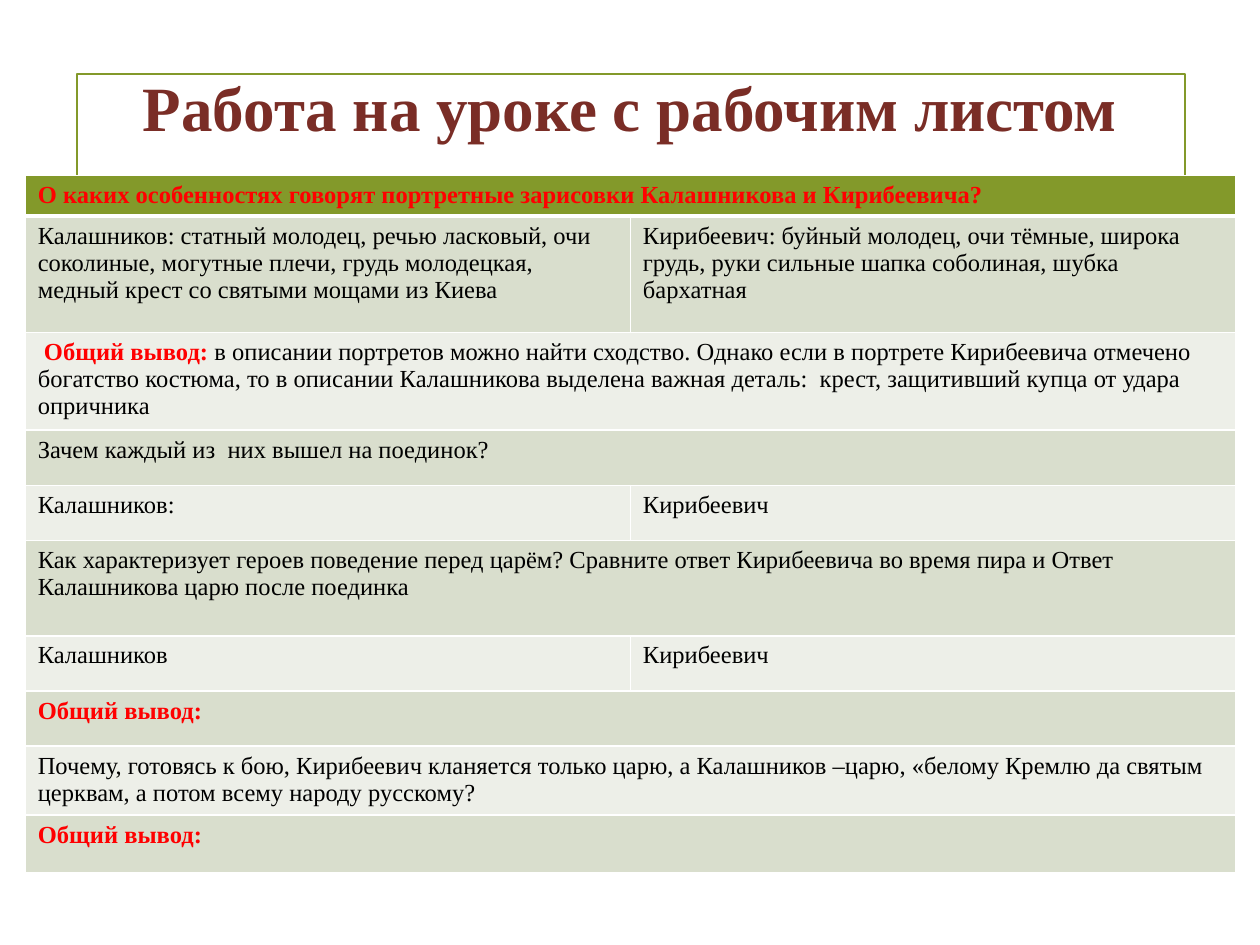
from lxml.etree import SubElement
from pptx import Presentation
from pptx.dml.color import RGBColor
from pptx.enum.shapes import MSO_SHAPE
from pptx.enum.text import MSO_ANCHOR, PP_ALIGN
from pptx.oxml.ns import qn
from pptx.util import Pt

COLORS = {
    "olive": "83992A",
    "title": "7A2D26",
    "accent": "FF0000",
    "text": "000000",
    "border": "FFFFFF",
    "dark band": "D9DECD",
    "light band": "EDEFE8",
}
CONCLUSION = ("Общий вывод:", True)

# Each row is its height and its cells; a cell is a list of (text, highlighted) runs.
ROWS = [
    (23, [[("О каких особенностях говорят портретные зарисовки Калашникова и Кирибеевича?", True)]]),
    (66.5, [
        [("Калашников: статный молодец, речью ласковый, очи соколиные, могутные плечи, "
          "грудь молодецкая, медный крест со святыми мощами из Киева", False)],
        [("Кирибеевич: буйный молодец, очи тёмные, широка грудь, руки сильные "
          "шапка соболиная, шубка бархатная", False)],
    ]),
    (56, [[
        (" ", False),
        CONCLUSION,
        (" в описании портретов можно найти сходство. Однако если в портрете Кирибеевича "
         "отмечено богатство костюма, то в описании Калашникова выделена важная деталь:  "
         "крест, защитивший купца от удара опричника", False),
    ]]),
    (31.5, [[("Зачем каждый из  них вышел на поединок?", False)]]),
    (31.5, [[("Калашников:", False)], [("Кирибеевич", False)]]),
    (54.5, [[("Как характеризует героев поведение перед царём? Сравните ответ Кирибеевича "
              "во время пира и Ответ Калашникова царю после поединка", False)]]),
    (31.5, [[("Калашников", False)], [("Кирибеевич", False)]]),
    (31.5, [[CONCLUSION]]),
    (39.5, [[("Почему, готовясь к бою, Кирибеевич кланяется только царю, а Калашников –царю, "
              "«белому Кремлю да святым церквам, а потом всему народу русскому?", False)]]),
    (33, [[CONCLUSION]]),
]


class SlideBuilder:
    font_name = "Times New Roman"

    def __init__(self, slide):
        self.slide = slide

    def color(self, name):
        return RGBColor.from_string(COLORS[name])

    def style(self, font, size, color, bold):
        font.name = self.font_name
        font.size = Pt(size)
        font.bold = bold
        font.color.rgb = self.color(color)

    def title(self, text, left, top, width, height):
        shape = self.slide.shapes.title
        shape.left, shape.top, shape.width, shape.height = map(Pt, (left, top, width, height))
        frame = shape.text_frame
        frame.text = text
        frame.vertical_anchor = MSO_ANCHOR.MIDDLE
        paragraph = frame.paragraphs[0]
        paragraph.alignment = PP_ALIGN.CENTER
        self.style(paragraph.font, 36, "title", True)

    def frame(self, left, top, width, height):
        shape = self.slide.shapes.add_shape(
            MSO_SHAPE.RECTANGLE, Pt(left), Pt(top), Pt(width), Pt(height))
        shape.shadow.inherit = False
        shape.fill.background()
        shape.line.color.rgb = self.color("olive")
        shape.line.width = Pt(1.25)

    def borders(self, cell, top, bottom):
        properties = cell._tc.get_or_add_tcPr()
        for side, width in (("L", 1), ("R", 1), ("T", top), ("B", bottom)):
            line = SubElement(properties, qn(f"a:ln{side}"), w=str(Pt(width)))
            fill = SubElement(line, qn("a:solidFill"))
            SubElement(fill, qn("a:srgbClr"), val=COLORS["border"])

    def cell_text(self, cell, runs):
        paragraph = cell.text_frame.paragraphs[0]
        if len(runs) == 1:
            text, highlighted = runs[0]
            paragraph.add_run().text = text
            self.style(paragraph.font, 14, "accent" if highlighted else "text", highlighted)
            return
        for text, highlighted in runs:
            run = paragraph.add_run()
            run.text = text
            self.style(run.font, 14, "accent" if highlighted else "text", highlighted)

    def table(self, rows, left, top, width):
        """Add a two-column table in which a row with one cell spans both columns."""
        height = sum(row_height for row_height, _ in rows)
        table = self.slide.shapes.add_table(
            len(rows), 2, Pt(left), Pt(top), Pt(width), Pt(height)).table
        for column in table.columns:
            column.width = Pt(width / 2)
        for index, (row_height, contents) in enumerate(rows):
            table.rows[index].height = Pt(row_height)
            band = "olive" if index == 0 else "dark band" if index % 2 else "light band"
            for column in range(2):
                cell = table.cell(index, column)
                self.borders(cell, top=3 if index == 1 else 1, bottom=3 if index == 0 else 1)
                cell.fill.solid()
                cell.fill.fore_color.rgb = self.color(band)
            if len(contents) == 1:
                table.cell(index, 0).merge(table.cell(index, 1))
            for column, runs in enumerate(contents):
                self.cell_text(table.cell(index, column), runs)


def main():
    presentation = Presentation()
    presentation.slide_width, presentation.slide_height = Pt(720), Pt(540)
    slide = presentation.slides.add_slide(presentation.slide_layouts[5])
    builder = SlideBuilder(slide)
    builder.frame(44, 42.5, 633, 453.5)
    builder.title("Работа на уроке с рабочим листом", 36, 21.5, 648, 78.5)
    builder.table(ROWS, 14.4, 100.4, 691.6)
    presentation.save("out.pptx")


if __name__ == "__main__":
    main()
